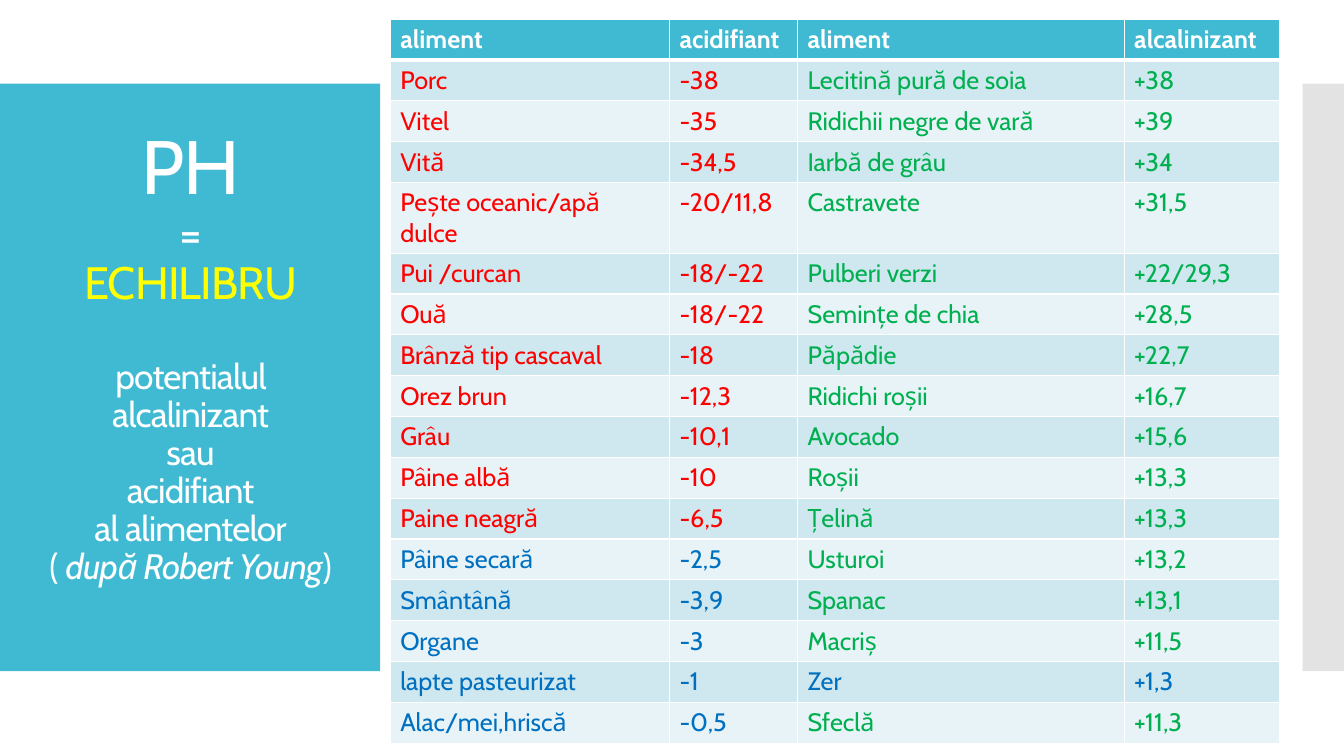
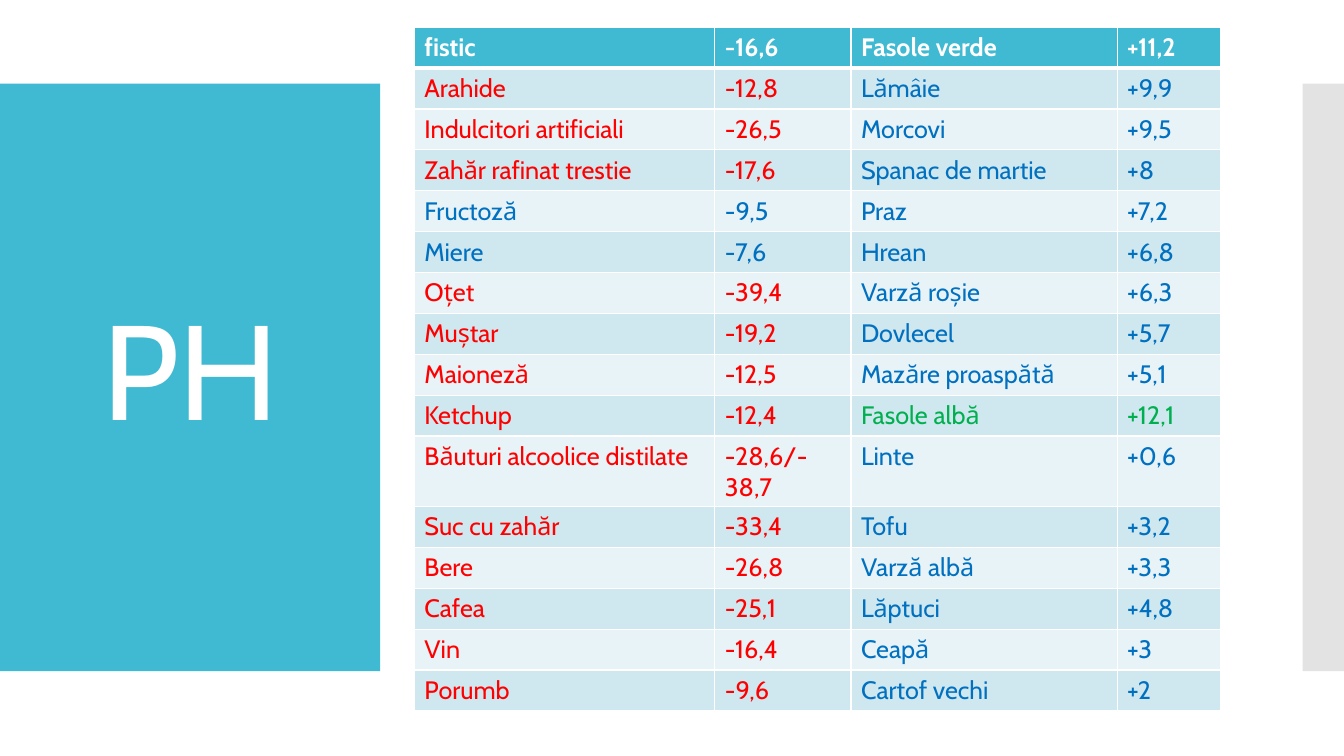
from lxml.etree import SubElement
from pptx import Presentation
from pptx.dml.color import RGBColor
from pptx.enum.shapes import MSO_SHAPE
from pptx.enum.text import MSO_ANCHOR, PP_ALIGN
from pptx.oxml import parse_xml
from pptx.oxml.ns import nsdecls, qn
from pptx.util import Inches, Pt

FONT = "Cabin"
WHITE = RGBColor(0xFF, 0xFF, 0xFF)
TEAL = RGBColor(0x40, 0xBA, 0xD2)
GREY = RGBColor(0xC8, 0xC8, 0xC8)
YELLOW = RGBColor(0xFF, 0xFF, 0x00)
RED = RGBColor(0xFF, 0x00, 0x00)
GREEN = RGBColor(0x00, 0xB0, 0x50)
BLUE = RGBColor(0x00, 0x70, 0xC0)
ROW_FILLS = (RGBColor(0xCF, 0xE7, 0xEE), RGBColor(0xE8, 0xF3, 0xF7))

BALANCE_HEADER = ("aliment", "acidifiant", "aliment", "alcalinizant")
BALANCE_GROUPS = [
    (RED, GREEN, [
        ("Porc", "-38", "Lecitină pură de soia", "+38"),
        ("Vitel", "-35", "Ridichii negre de vară", "+39"),
        ("Vită", "-34,5", "Iarbă de grâu", "+34"),
        ("Pește oceanic/apă dulce", "-20/11,8", "Castravete", "+31,5"),
        ("Pui /curcan", "-18/-22", "Pulberi verzi", "+22/29,3"),
        ("Ouă", "-18/-22", "Semințe de chia", "+28,5"),
        ("Brânză tip cascaval", "-18", "Păpădie", "+22,7"),
        ("Orez brun", "-12,3", "Ridichi roșii", "+16,7"),
        ("Grâu", "-10,1", "Avocado", "+15,6"),
        ("Pâine albă", "-10", "Roșii", "+13,3"),
        ("Paine neagră", "-6,5", "Țelină", "+13,3"),
    ]),
    (BLUE, GREEN, [
        ("Pâine secară", "-2,5", "Usturoi", "+13,2"),
        ("Smântână", "-3,9", "Spanac", "+13,1"),
        ("Organe", "-3", "Macriș", "+11,5"),
    ]),
    (BLUE, BLUE, [("lapte pasteurizat", "-1", "Zer", "+1,3")]),
    (BLUE, GREEN, [("Alac/mei,hriscă", "-0,5", "Sfeclă", "+11,3")]),
]

PH_HEADER = ("fistic", "-16,6", "Fasole verde", "+11,2")
PH_GROUPS = [
    (RED, BLUE, [
        ("Arahide", "-12,8", "Lămâie", "+9,9"),
        ("Indulcitori artificiali", "-26,5", "Morcovi", "+9,5"),
        ("Zahăr rafinat trestie", "-17,6", "Spanac de martie", "+8"),
    ]),
    (BLUE, BLUE, [
        ("Fructoză", "-9,5", "Praz", "+7,2"),
        ("Miere", "-7,6", "Hrean", "+6,8"),
    ]),
    (RED, BLUE, [
        ("Oțet", "-39,4", "Varză roșie", "+6,3"),
        ("Muștar", "-19,2", "Dovlecel", "+5,7"),
        ("Maioneză", "-12,5", "Mazăre proaspătă", "+5,1"),
    ]),
    (RED, GREEN, [("Ketchup", "-12,4", "Fasole albă", "+12,1")]),
    (RED, BLUE, [
        ("Băuturi alcoolice distilate", "-28,6/-38,7", "Linte", "+0,6"),
        ("Suc cu zahăr", "-33,4", "Tofu", "+3,2"),
        ("Bere", "-26,8", "Varză albă", "+3,3"),
        ("Cafea", "-25,1", "Lăptuci", "+4,8"),
        ("Vin", "-16,4", "Ceapă", "+3"),
        ("Porumb", "-9,6", "Cartof vechi", "+2"),
    ]),
]


def add_text(paragraph, text, size=18, color=WHITE, bold=False, italic=False, spacing=0):
    run = paragraph.add_run()
    run.text = text
    run.font.name = FONT
    run.font.size = Pt(size)
    run.font.color.rgb = color
    run.font.bold = bold
    run.font.italic = italic
    if spacing:
        run.font._element.set("spc", str(spacing))


def add_band(slide, left, width, color, opacity=100):
    band = slide.shapes.add_shape(
        MSO_SHAPE.RECTANGLE, Inches(left), Inches(0.83), Inches(width), Inches(5.83))
    band.shadow.inherit = False
    band.fill.solid()
    band.fill.fore_color.rgb = color
    band.line.fill.background()
    if opacity < 100:
        tint = band.fill._xPr.find(qn("a:solidFill"))[0]
        SubElement(tint, qn("a:alpha"), val=str(opacity * 1000))


def add_title(slide, lines, height):
    title = slide.shapes.add_textbox(Inches(0.28), Inches(1.23), Inches(3.22), Inches(height))
    frame = title.text_frame
    frame.word_wrap = True
    frame.vertical_anchor = MSO_ANCHOR.MIDDLE
    for index, (space_before, runs) in enumerate(lines):
        paragraph = frame.add_paragraph() if index else frame.paragraphs[0]
        paragraph.alignment = PP_ALIGN.CENTER
        paragraph.line_spacing = 0.9
        paragraph.space_before = Pt(space_before)
        for text, style in runs:
            add_text(paragraph, text, spacing=-60, **style)


def set_borders(cell, top, bottom):
    properties = cell._tc.get_or_add_tcPr()
    sides = (("L", 1), ("R", 1), ("T", top), ("B", bottom))
    for position, (side, width) in enumerate(sides):
        properties.insert(position, parse_xml(
            f'<a:ln{side} {nsdecls("a")} w="{Pt(width)}"><a:solidFill>'
            f'<a:srgbClr val="{WHITE}"/></a:solidFill></a:ln{side}>'))


def fill_row(cells, texts, colors, background, bold=False, top=1, bottom=1):
    for cell, text, color in zip(cells, texts, colors):
        cell.fill.solid()
        cell.fill.fore_color.rgb = background
        set_borders(cell, top, bottom)
        add_text(cell.text_frame.paragraphs[0], text, color=color, bold=bold)


def add_food_table(slide, left, top, height, widths, header, groups):
    foods = [(texts, (acid, acid, alkaline, alkaline))
             for acid, alkaline, rows in groups for texts in rows]
    table = slide.shapes.add_table(
        len(foods) + 1, len(widths), Inches(left), Inches(top),
        Inches(sum(widths)), Inches(height)).table
    for column, width in zip(table.columns, widths):
        column.width = Inches(width)
    fill_row(table.rows[0].cells, header, [WHITE] * 4, TEAL, bold=True, bottom=3)
    for index, (texts, colors) in enumerate(foods):
        fill_row(table.rows[index + 1].cells, texts, colors, ROW_FILLS[index % 2],
                 top=1 if index else 3)


def add_food_slide(deck, title_lines, title_height, **table):
    slide = deck.slides.add_slide(deck.slide_layouts[6])
    add_band(slide, 0, 3.77, TEAL)
    add_band(slide, 12.92, 0.42, GREY, opacity=50)
    add_title(slide, title_lines, title_height)
    add_food_table(slide, **table)


def main():
    deck = Presentation()
    deck.slide_width = Inches(13.33)
    deck.slide_height = Inches(7.5)

    body = {"size": 25.2}
    balance_title = [
        (0, [("PH", {"size": 54})]),
        (0, [("=", {"size": 32.4})]),
        (0, [("ECHILIBRU", {"size": 32.4, "color": YELLOW})]),
        (35.4, [("potentialul alcalinizant", body)]),
        (0, [("sau", body)]),
        (0, [("acidifiant", body)]),
        (0, [("al alimentelor", body)]),
        (0, [("( ", body), ("după Robert Young", {"size": 25.2, "italic": True}), (")", body)]),
    ]
    add_food_slide(deck, balance_title, 4.65, left=3.87, top=0.19, height=6.89,
                   widths=(2.77, 1.27, 3.24, 1.54),
                   header=BALANCE_HEADER, groups=BALANCE_GROUPS)
    add_food_slide(deck, [(0, [("PH", {"size": 96})])], 5.03, left=4.11, top=0.27, height=6.49,
                   widths=(2.98, 1.35, 2.64, 1.03),
                   header=PH_HEADER, groups=PH_GROUPS)
    deck.save("out.pptx")


if __name__ == "__main__":
    main()
